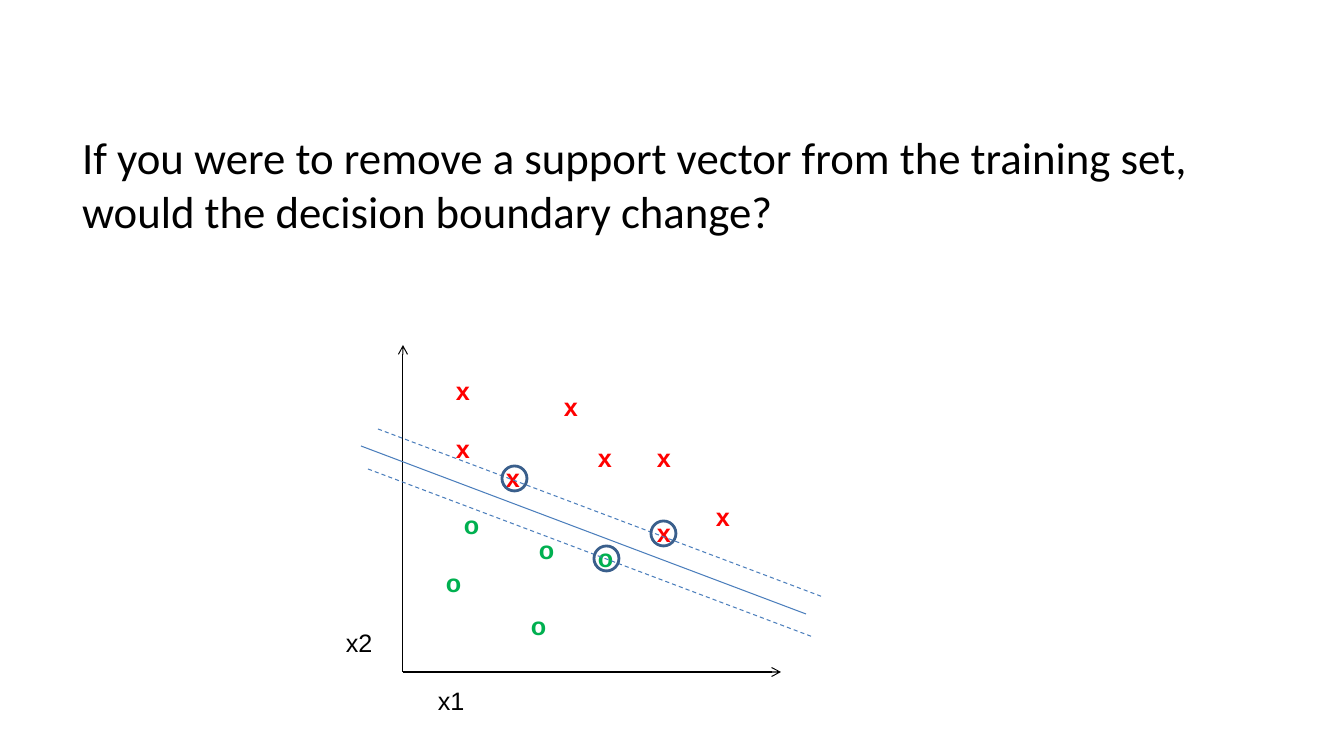
from lxml import etree
from pptx import Presentation
from pptx.dml.color import RGBColor
from pptx.enum.dml import MSO_LINE
from pptx.enum.shapes import MSO_CONNECTOR, MSO_SHAPE
from pptx.enum.text import MSO_ANCHOR, MSO_AUTO_SIZE
from pptx.oxml.ns import qn
from pptx.util import Emu, Pt

STRAIGHT = MSO_CONNECTOR.STRAIGHT
OVAL = MSO_SHAPE.OVAL
DASH = MSO_LINE.DASH
TOP = MSO_ANCHOR.TOP
FIT_SHAPE = MSO_AUTO_SIZE.SHAPE_TO_FIT_TEXT
NO_FIT = MSO_AUTO_SIZE.NONE

EMU_PER_PX = 914400 / 100.8
BLACK, RED, GREEN = "000000", "FF0000", "00B050"
BOUNDARY_BLUE, RING_BLUE = "4B7EBC", "3A5F8C"


def px(*lengths):
    """Turn pixel lengths into a list of EMU lengths."""
    return [Emu(round(length * EMU_PER_PX)) for length in lengths]


def rgb(value):
    return RGBColor.from_string(value)


prs = Presentation()
prs.slide_width, prs.slide_height = px(1344, 756)
slide = prs.slides.add_slide(prs.slide_layouts[1])
shapes = slide.shapes
unused_title = shapes.title.element
unused_title.getparent().remove(unused_title)

# Question
question = slide.placeholders[1]
question.left, question.top, question.width, question.height = px(72, 59, 1210, 567)
frame = question.text_frame
frame.margin_top = px(71)[0]
for setting, value in {"word_wrap": True, "auto_size": NO_FIT, "vertical_anchor": TOP}.items():
    setattr(frame, setting, value)
paragraph = frame.paragraphs[0]
paragraph.text = ("If you were to remove a support vector from the training set, "
                  "would the decision boundary change?")
paragraph.space_before = Pt(0)
properties = paragraph._p.get_or_add_pPr()
properties.set("marL", "0")
properties.set("indent", "0")
etree.SubElement(properties, qn("a:buNone"))
for setting, value in {"name": "Calibri", "size": Pt(32)}.items():
    setattr(paragraph.font, setting, value)
paragraph.font.color.rgb = rgb(BLACK)

# Training points and axis labels: text, colour, bold, width, top-left corners
plot_texts = [
    ("x", RED, True, 34, [(588, 437), (647, 437), (647, 512), (706, 496),
                          (446, 370), (446, 428), (554, 386), (496, 457)]),
    ("o", GREEN, True, 36, [(588, 537), (436, 562), (454, 504), (521, 605), (529, 529)]),
    ("x2", BLACK, False, 47, [(336, 622)]),
    ("x1", BLACK, False, 47, [(428, 680)]),
]
for text, color, bold, width, corners in plot_texts:
    for left, top in corners:
        frame = shapes.add_textbox(*px(left, top, width, 40)).text_frame
        frame.word_wrap = False
        frame.auto_size = FIT_SHAPE
        paragraph = frame.paragraphs[0]
        paragraph.text = text
        for setting, value in {"name": "Arial", "size": Pt(18), "bold": bold}.items():
            setattr(paragraph.font, setting, value)
        paragraph.font.color.rgb = rgb(color)

# Axes, decision boundary and its margins: start, extent, colour, dash, arrow
plot_lines = [
    (403, 672, 0, -327, BLACK, None, True),
    (403, 672, 378, 0, BLACK, None, True),
    (361, 446, 445, 168, BOUNDARY_BLUE, None, False),
    (378, 429, 445, 168, BOUNDARY_BLUE, DASH, False),
    (368, 469, 445, 168, BOUNDARY_BLUE, DASH, False),
]
for x, y, dx, dy, color, dash, arrow in plot_lines:
    plot_line = shapes.add_connector(STRAIGHT, *px(x, y, x + dx, y + dy))
    plot_line.line.width = Pt(0.75)
    plot_line.line.color.rgb = rgb(color)
    if dash:
        plot_line.line.dash_style = dash
    if arrow:
        etree.SubElement(plot_line.line._get_or_add_ln(), qn("a:tailEnd"), type="arrow")
    etree.SubElement(plot_line._element.spPr, qn("a:effectLst"))

# Rings around the support vectors
for left, top in [(502, 466), (651, 521), (594, 546)]:
    ring = shapes.add_shape(OVAL, *px(left, top, 25, 25))
    ring.shadow.inherit = False
    ring.fill.background()
    ring.line.color.rgb = rgb(RING_BLUE)
    ring.line.width = Pt(2)

prs.save("out.pptx")
